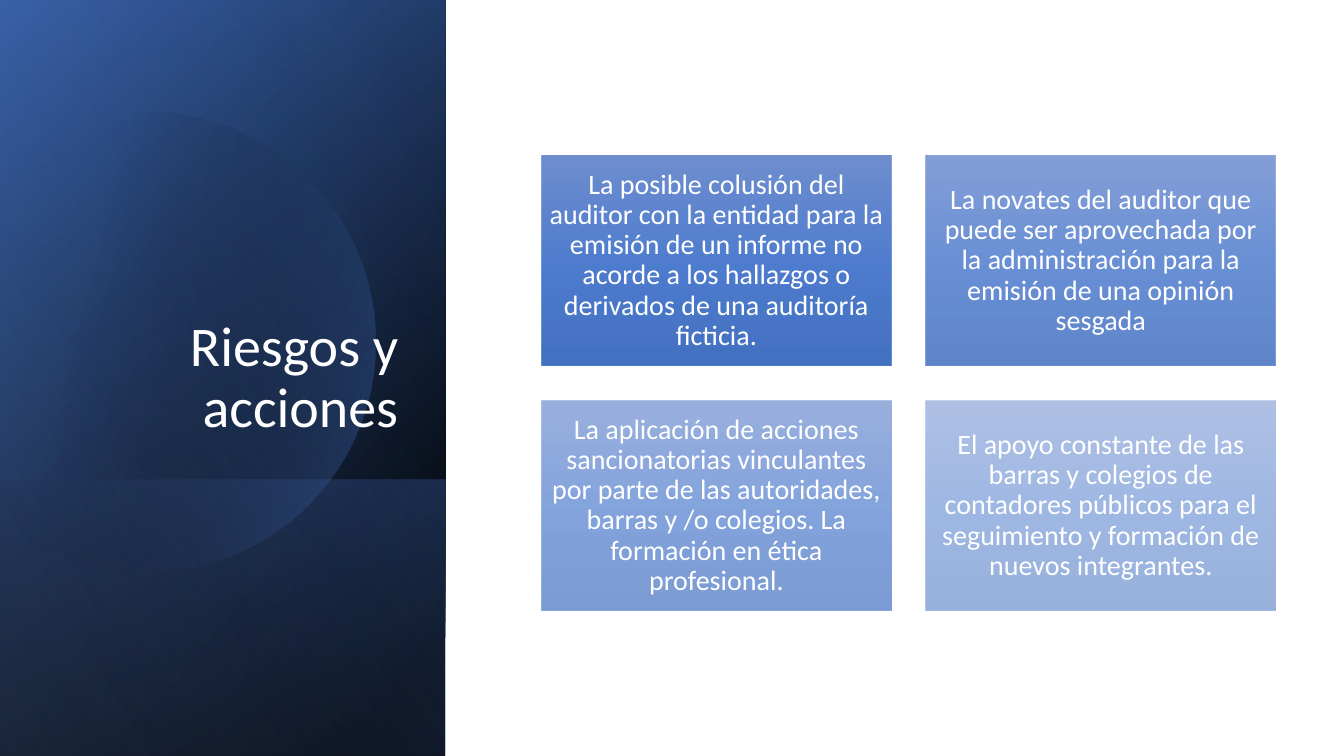
import math
from dataclasses import dataclass

import pptx
import pptx.dml.color
import pptx.enum.shapes
import pptx.enum.text
import pptx.oxml
import pptx.oxml.ns
import pptx.util

ALIGN = pptx.enum.text.PP_ALIGN
ANCHOR = pptx.enum.text.MSO_ANCHOR


@dataclass(frozen=True)
class Theme:
    font: str = "Calibri"
    title_size: int = 40
    body_size: int = 20
    text: str = "FFFFFF"
    dark: str = "000000"
    navy: str = "2F5597"
    blue: str = "4472C4"
    pale: str = "8FAADC"
    card: tuple = ("6183CB", "3E70CA", "3062BB")


class Deck:
    """Places elements by percent shares of the slide's width and height."""

    def __init__(self, theme):
        self.theme = theme
        self.prs = pptx.Presentation()
        self.prs.slide_width = pptx.util.Inches(13.33)
        self.prs.slide_height = pptx.util.Inches(7.5)
        self.s = self.prs.slides.add_slide(self.prs.slide_layouts[5])

    def x(self, share):
        return round(self.prs.slide_width * share / 100)

    def y(self, share):
        return round(self.prs.slide_height * share / 100)

    def box(self, left, top, width, height):
        return self.x(left), self.y(top), self.x(width), self.y(height)

    def gradient(self, sp, stops, angle):
        """Fill with (position, colour, opacity) stops, all in percent."""
        sp.shadow.inherit = False
        sp.line.fill.background()
        sp.fill.background()
        gs = "".join(
            f'<a:gs pos="{pos * 1000}"><a:srgbClr val="{color}">'
            f'<a:alpha val="{opacity * 1000}"/></a:srgbClr></a:gs>'
            for pos, color, opacity in stops)
        fill = pptx.oxml.parse_xml(
            f'<a:gradFill {pptx.oxml.ns.nsdecls("a")} rotWithShape="1">'
            f'<a:gsLst>{gs}</a:gsLst>'
            f'<a:lin ang="{angle * 60000}" scaled="0"/></a:gradFill>')
        spPr = sp._element.spPr
        spPr.replace(spPr.find(pptx.oxml.ns.qn("a:noFill")), fill)

    def rect(self, left, top, width, height):
        return self.s.shapes.add_shape(
            pptx.enum.shapes.MSO_SHAPE.RECTANGLE, left, top, width, height)

    def panel(self, area, stops, angle):
        """Mirrored rectangle, turned a quarter, that covers the area."""
        left, top, w, h = self.box(*area)
        sp = self.rect(left + (w - h) // 2, top + (h - w) // 2, h, w)
        sp.rotation = 90
        sp._element.spPr.find(pptx.oxml.ns.qn("a:xfrm")).set("flipH", "1")
        self.gradient(sp, stops, angle)

    def cut_circle(self, cx, cy, radius, cut, stops, angle):
        """Circle whose left side ends in a straight edge at the cut."""
        cx, cy, r = self.x(cx), self.y(cy), self.x(radius)
        end = math.acos((self.x(cut) - cx) / r)
        steps = 120
        turns = [end * (2 * i / steps - 1) for i in range(steps + 1)]
        points = [(round(cx + r * math.cos(t)), round(cy + r * math.sin(t)))
                  for t in turns]
        builder = self.s.shapes.build_freeform(*points[0])
        builder.add_line_segments(points[1:], close=True)
        self.gradient(builder.convert_to_shape(), stops, angle)

    def label(self, sp, text, size, align, anchor, inset):
        tf = sp.text_frame
        tf.text = text
        p = tf.paragraphs[0]
        r = p.runs[0]
        margin = pptx.util.Inches(inset)
        formats = {
            tf: {"word_wrap": True, "vertical_anchor": anchor,
                 "auto_size": pptx.enum.text.MSO_AUTO_SIZE.NONE,
                 "margin_left": margin, "margin_right": margin,
                 "margin_top": margin, "margin_bottom": margin},
            p: {"alignment": align, "line_spacing": 0.9},
            r.font: {"name": self.theme.font, "size": pptx.util.Pt(size)},
        }
        for target, values in formats.items():
            for name, value in values.items():
                setattr(target, name, value)
        r.font.color.rgb = pptx.dml.color.RGBColor.from_string(self.theme.text)

    def title(self, area, text):
        sp = self.s.shapes.title
        sp.left, sp.top, sp.width, sp.height = self.box(*area)
        self.label(sp, text, self.theme.title_size, ALIGN.RIGHT, ANCHOR.BOTTOM, 0.1)
        self.s.shapes._spTree.append(sp._element)  # bring above the panels

    def card(self, area, text, opacity):
        sp = self.rect(*self.box(*area))
        stops = [(pos, color, opacity)
                 for pos, color in zip((0, 50, 100), self.theme.card)]
        self.gradient(sp, stops, 90)
        self.label(sp, text, self.theme.body_size, ALIGN.CENTER, ANCHOR.MIDDLE, 0.08)


CARDS = [
    ("La posible colusión del auditor con la entidad para la emisión de un "
     "informe no acorde a los hallazgos o derivados de una auditoría ficticia.", 90),
    ("La novates del auditor que puede ser aprovechada por la administración "
     "para la emisión de una opinión sesgada", 77),
    ("La aplicación de acciones sancionatorias vinculantes por parte de las "
     "autoridades, barras y /o colegios. La formación en ética profesional.", 63),
    ("El apoyo constante de las barras y colegios de contadores públicos para "
     "el seguimiento y formación de nuevos integrantes.", 50),
]


def main():
    t = Theme()
    deck = Deck(t)

    # Left band: layered gradients
    band = (0, 0, 33.15, 100)
    foot = (0, 63.47, 33.15, 36.53)
    deck.panel(band, [(8, t.dark, 100), (100, t.navy, 100)], 50)
    deck.panel(band, [(0, t.dark, 0), (99, t.blue, 46)], 30)
    deck.panel(foot, [(2, t.blue, 29), (100, t.dark, 30)], 130)
    deck.cut_circle(10.8, 45.2, 17.14, -1.13,
                    [(29, t.dark, 0), (100, t.blue, 43)], 14)
    deck.panel(band, [(0, t.dark, 0), (99, t.pale, 11)], 120)

    # Title
    deck.title((4.8, 24.53, 25.58, 34.93), "Riesgos y acciones")

    # Two by two grid of cards
    left, top, width, height = 40.28, 20.6, 26.05, 27.8
    col_step, row_step = 28.6, 32.4
    for i, (text, opacity) in enumerate(CARDS):
        row, col = divmod(i, 2)
        deck.card((left + col * col_step, top + row * row_step, width, height),
                  text, opacity)

    deck.prs.save("out.pptx")


if __name__ == "__main__":
    main()
